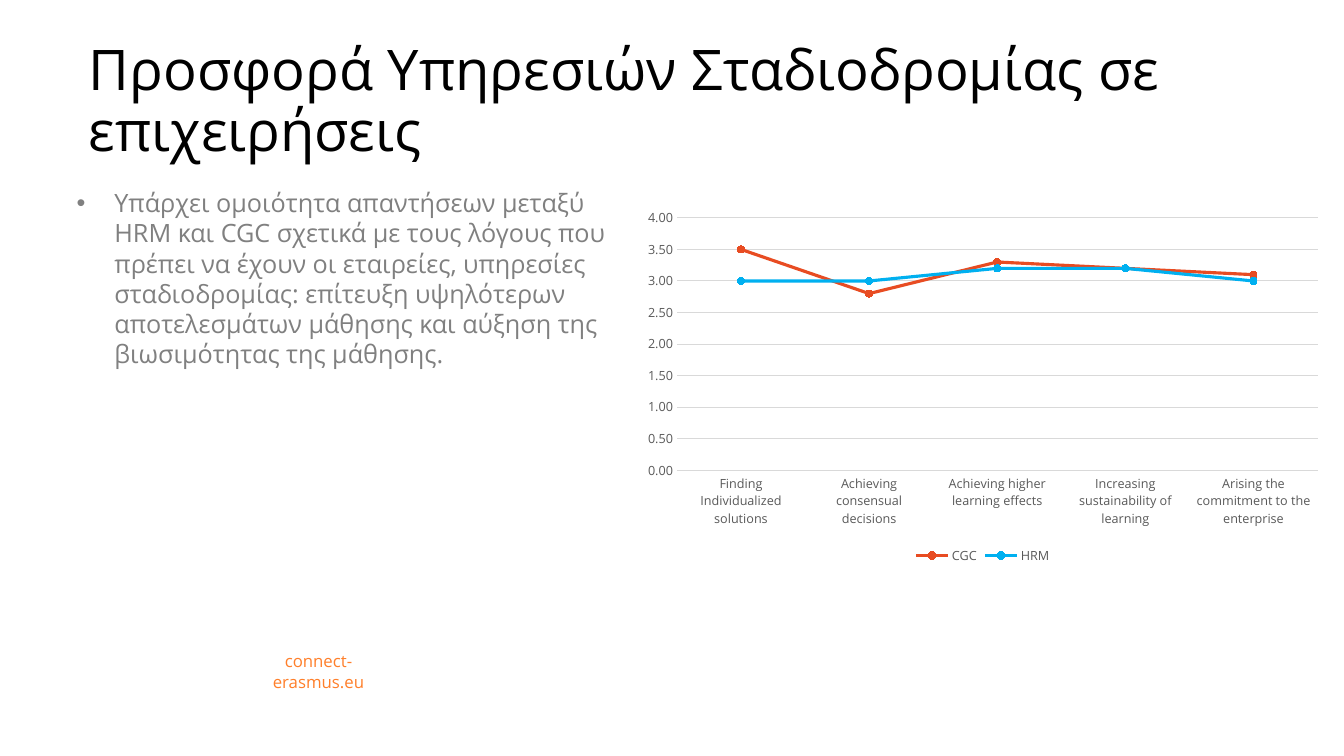
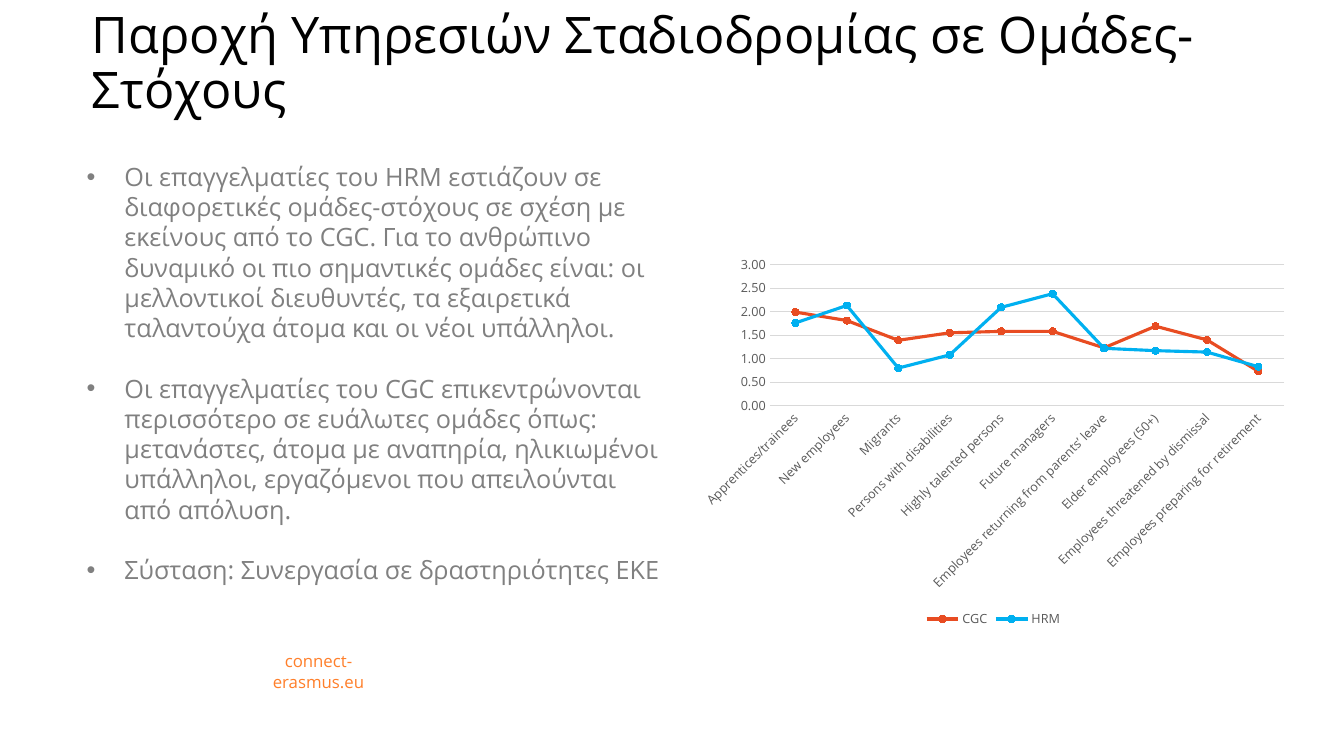
from lxml import etree
from pptx import Presentation
from pptx.chart.data import CategoryChartData
from pptx.dml.color import RGBColor
from pptx.enum.chart import XL_CHART_TYPE, XL_LEGEND_POSITION, XL_MARKER_STYLE, XL_TICK_MARK
from pptx.enum.text import MSO_ANCHOR, MSO_AUTO_SIZE, PP_ALIGN
from pptx.oxml.ns import qn
from pptx.util import Pt

LINE_MARKERS = XL_CHART_TYPE.LINE_MARKERS
LEGEND_BOTTOM = XL_LEGEND_POSITION.BOTTOM
CIRCLE = XL_MARKER_STYLE.CIRCLE
NO_TICK = XL_TICK_MARK.NONE
TOP, MIDDLE, BOTTOM = MSO_ANCHOR.TOP, MSO_ANCHOR.MIDDLE, MSO_ANCHOR.BOTTOM
NO_FIT = MSO_AUTO_SIZE.NONE
LEFT, CENTER = PP_ALIGN.LEFT, PP_ALIGN.CENTER

FONT = "Open Sans"
COLORS = {
    "title": "000000", "body": "808080", "footer": "FF7F2A",
    "label": "595959", "grid": "D9D9D9", "CGC": "E84C22", "HRM": "00B0F0",
}
FOOTER_TEXT = "connect-erasmus.eu"
FOOTER_BOX = (164.2, 468.7, 126.7, 21.6)
PARAGRAPH_GAP = 21.6
BULLET_INDENT = 27

SLIDES = [
    {
        "title": "Προσφορά Υπηρεσιών Σταδιοδρομίας σε επιχειρήσεις",
        "title_size": 40,
        "title_box": (56.2, 5, 879.1, 115.2),
        "body_box": (47.5, 130.3, 397.4, 351.4),
        "chart_box": (452.9, 144, 498.2, 262.1),
        "bullets": [
            "Υπάρχει ομοιότητα απαντήσεων μεταξύ HRM και CGC σχετικά με τους λόγους που "
            "πρέπει να έχουν οι εταιρείες, υπηρεσίες σταδιοδρομίας: επίτευξη υψηλότερων "
            "αποτελεσμάτων μάθησης και αύξηση της βιωσιμότητας της μάθησης.",
        ],
        "categories": [
            "Finding Individualized solutions", "Achieving consensual decisions",
            "Achieving higher learning effects", "Increasing sustainability of learning",
            "Arising the commitment to the enterprise",
        ],
        "series": {"CGC": [3.5, 2.8, 3.3, 3.2, 3.1], "HRM": [3, 3, 3.2, 3.2, 3]},
        "maximum": 4,
        "label_angle": 0,
    },
    {
        "title": "Παροχή Υπηρεσιών Σταδιοδρομίας σε Ομάδες-Στόχους",
        "title_size": 36,
        "title_box": (58.3, 18, 869.8, 70.6),
        "body_box": (54.7, 111.6, 424.8, 378.7),
        "chart_box": (493.2, 177.1, 432.7, 274.3),
        "bullets": [
            "Οι επαγγελματίες του HRM εστιάζουν σε διαφορετικές ομάδες-στόχους σε σχέση με "
            "εκείνους από το CGC. Για το ανθρώπινο δυναμικό οι πιο σημαντικές ομάδες είναι: οι "
            "μελλοντικοί διευθυντές, τα εξαιρετικά ταλαντούχα άτομα και οι νέοι υπάλληλοι.",
            "Οι επαγγελματίες του CGC επικεντρώνονται περισσότερο σε ευάλωτες ομάδες όπως: "
            "μετανάστες, άτομα με αναπηρία, ηλικιωμένοι υπάλληλοι, εργαζόμενοι που "
            "απειλούνται από απόλυση.",
            "Σύσταση: Συνεργασία σε δραστηριότητες ΕΚΕ",
        ],
        "categories": [
            "Apprentices/trainees", "New employees", "Migrants", "Persons with disabilities",
            "Highly talented persons", "Future managers",
            "Employees returning from parents’ leave", "Elder employees (50+)",
            "Employees threatened by dismissal", "Employees preparing for retirement",
        ],
        "series": {
            "CGC": [1.99, 1.81, 1.39, 1.55, 1.58, 1.58, 1.23, 1.69, 1.4, 0.73],
            "HRM": [1.76, 2.13, 0.8, 1.08, 2.09, 2.38, 1.22, 1.17, 1.14, 0.83],
        },
        "maximum": 3,
        "label_angle": -45,
    },
]


def apply_format(target, values):
    """Set each attribute of the target from a dict of values."""
    for name, value in values.items():
        setattr(target, name, value)


def format_font(font, size, color):
    """Give a font the shared typeface, a size and a named colour."""
    apply_format(font, {"name": FONT, "size": Pt(size), "bold": False})
    font.color.rgb = RGBColor.from_string(COLORS[color])


def format_line(line, width, color):
    """Give a line its width and a named colour."""
    line.width = Pt(width)
    line.color.rgb = RGBColor.from_string(COLORS[color])


def place(shape, box):
    """Move a shape to a box given in points."""
    apply_format(shape, dict(zip(("left", "top", "width", "height"), map(Pt, box))))


def prepare_frame(shape, anchor):
    """Set wrapping and anchoring of a shape's text and return its frame."""
    frame = shape.text_frame
    apply_format(frame, {"word_wrap": True, "auto_size": NO_FIT, "vertical_anchor": anchor})
    return frame


def add_title(slide, box, text, size):
    """Fill the title placeholder."""
    title = slide.shapes.title
    place(title, box)
    paragraph = prepare_frame(title, BOTTOM).paragraphs[0]
    paragraph.text = text
    apply_format(paragraph, {"alignment": LEFT, "line_spacing": 0.9})
    format_font(paragraph.font, size, "title")


def add_bullets(slide, box, bullets):
    """Fill the body placeholder with a bulleted list."""
    body = slide.placeholders[1]
    place(body, box)
    frame = prepare_frame(body, TOP)
    for index, text in enumerate(bullets):
        paragraph = frame.paragraphs[0] if index == 0 else frame.add_paragraph()
        paragraph.text = text
        properties = paragraph._p.get_or_add_pPr()
        properties.set("marL", str(Pt(BULLET_INDENT)))
        properties.set("indent", str(-Pt(BULLET_INDENT)))
        etree.SubElement(properties, qn("a:buFont"), typeface="Arial")
        etree.SubElement(properties, qn("a:buChar"), char="•")
        paragraph.space_before = Pt(PARAGRAPH_GAP if index else 0)
        format_font(paragraph.font, 18, "body")


def add_footer(slide, box):
    """Write the web address at the foot of the slide."""
    footer = slide.shapes.add_textbox(*map(Pt, box))
    frame = prepare_frame(footer, MIDDLE)
    apply_format(frame, {"margin_left": Pt(14), "margin_right": Pt(14)})
    paragraph = frame.paragraphs[0]
    paragraph.text = FOOTER_TEXT
    paragraph.alignment = CENTER
    format_font(paragraph.font, 12, "footer")


def add_line_chart(slide, box, categories, series_values, maximum, label_angle):
    """Add a line chart that compares the two groups."""
    data = CategoryChartData(number_format="###0.00")
    data.categories = categories
    for name, values in series_values.items():
        data.add_series(name, values)
    chart = slide.shapes.add_chart(LINE_MARKERS, *map(Pt, box), data).chart
    apply_format(chart, {"has_title": False, "has_legend": True})
    format_font(chart.font, 10, "title")
    apply_format(chart.legend, {"position": LEGEND_BOTTOM, "include_in_layout": False})
    format_font(chart.legend.font, 9, "label")

    category_axis, value_axis = chart.category_axis, chart.value_axis
    for axis in (category_axis, value_axis):
        apply_format(axis, {"major_tick_mark": NO_TICK, "minor_tick_mark": NO_TICK})
        format_font(axis.tick_labels.font, 9, "label")
    format_line(category_axis.format.line, 0.75, "grid")
    if label_angle:
        text_body = category_axis._element.find(qn("c:txPr")).find(qn("a:bodyPr"))
        text_body.set("rot", str(label_angle * 60000))
    apply_format(value_axis, {"minimum_scale": 0, "maximum_scale": maximum, "major_unit": 0.5})
    apply_format(value_axis.tick_labels,
                 {"number_format": "###0.00", "number_format_is_linked": False})
    value_axis.format.line.fill.background()
    format_line(value_axis.major_gridlines.format.line, 0.75, "grid")

    plot = chart.plots[0]
    plot.vary_by_categories = False
    for series in plot.series:
        series.smooth = False
        format_line(series.format.line, 2.25, series.name)
        marker = series.marker
        apply_format(marker, {"style": CIRCLE, "size": 5})
        marker.format.fill.solid()
        marker.format.fill.fore_color.rgb = RGBColor.from_string(COLORS[series.name])
        format_line(marker.format.line, 0.75, series.name)


def add_findings_slide(presentation, content):
    """Add a slide with a title, a list, a chart and the footer."""
    slide = presentation.slides.add_slide(presentation.slide_layouts[1])
    add_title(slide, content["title_box"], content["title"], content["title_size"])
    add_bullets(slide, content["body_box"], content["bullets"])
    add_footer(slide, FOOTER_BOX)
    add_line_chart(slide, content["chart_box"], content["categories"], content["series"],
                   content["maximum"], content["label_angle"])


def main():
    """Build and save the presentation."""
    presentation = Presentation()
    apply_format(presentation, {"slide_width": Pt(960), "slide_height": Pt(540)})
    for content in SLIDES:
        add_findings_slide(presentation, content)
    presentation.save("out.pptx")


if __name__ == "__main__":
    main()
